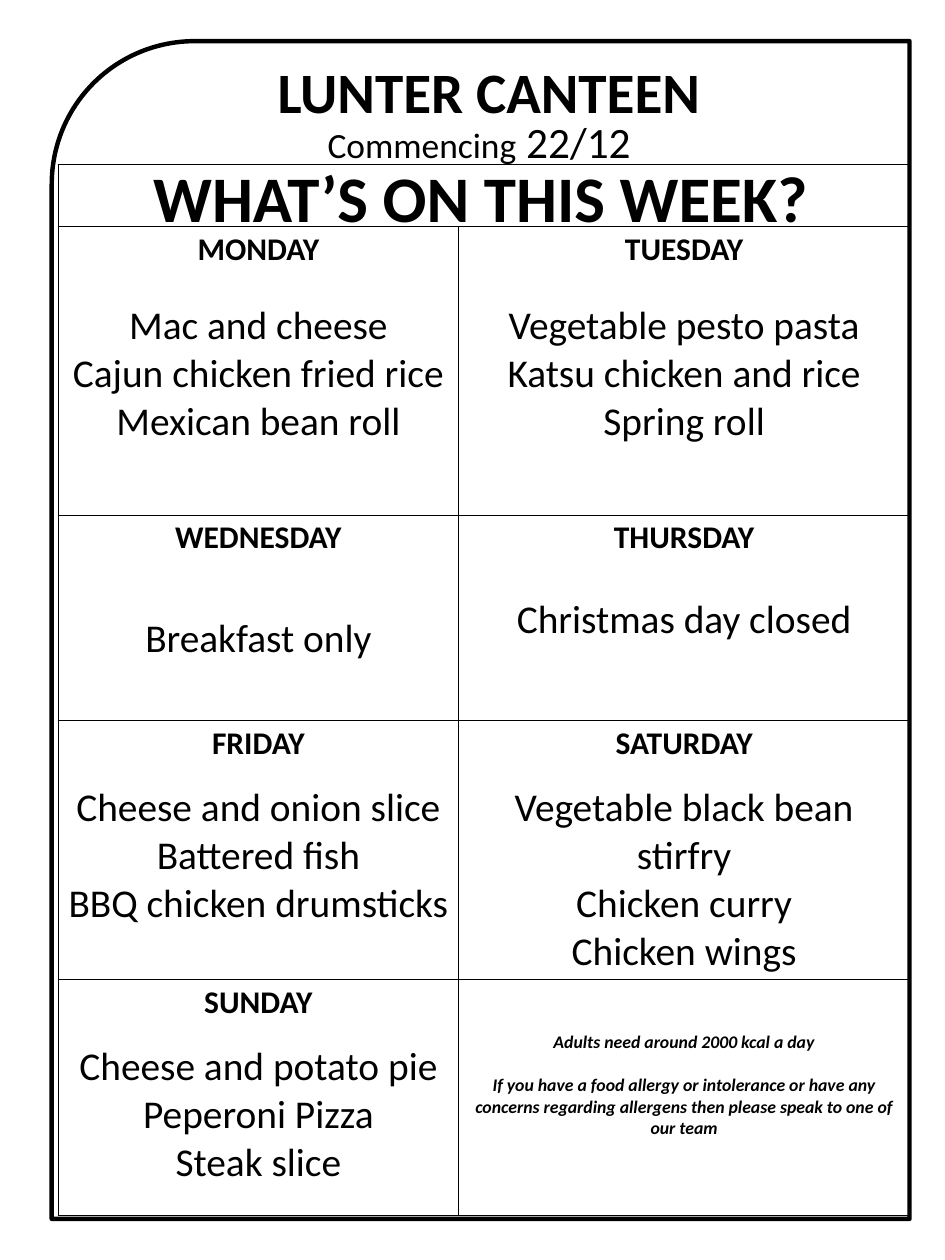
from lxml.etree import SubElement
from pptx import Presentation
from pptx.dml.color import RGBColor
from pptx.enum.shapes import MSO_SHAPE as Shape
from pptx.enum.text import PP_ALIGN as Align
from pptx.oxml.ns import qn
from pptx.util import Inches, Pt

FONT = "Calibri"
BLACK = "000000"
COLUMN_WIDTHS = [5.65, 6.36]
ROW_HEIGHTS = [0.88, 4.07, 2.9, 3.65, 3.32]

# Row, column, day, points between day and dishes, dishes
MENU = [
    (1, 0, "MONDAY", 34, ["Mac and cheese", "Cajun chicken fried rice", "Mexican bean roll"]),
    (1, 1, "TUESDAY", 34, ["Vegetable pesto pasta", "Katsu chicken and rice", "Spring roll"]),
    (2, 0, "WEDNESDAY", 59, ["Breakfast only"]),
    (2, 1, "THURSDAY", 39, ["Christmas day closed"]),
    (3, 0, "FRIDAY", 22, ["Cheese and onion slice", "Battered fish", "BBQ chicken drumsticks"]),
    (3, 1, "SATURDAY", 22, ["Vegetable black bean stirfry", "Chicken curry", "Chicken wings"]),
    (4, 0, "SUNDAY", 22, ["Cheese and potato pie", "Peperoni Pizza", "Steak slice"]),
]
ADVICE = [
    "Adults need around 2000 kcal a day",
    "If you have a food allergy or intolerance or have any concerns "
    "regarding allergens then please speak to one of our team",
]


def color(value):
    return RGBColor.from_string(value)


def style_font(font, size, bold=False, italic=False):
    font.name = FONT
    font.size = Pt(size)
    font.bold = bold
    font.italic = italic
    font.color.rgb = color(BLACK)


def add_line(text_frame, text, size, bold=False, italic=False, gap=0):
    """Fill the first paragraph if it is empty, else append one."""
    paragraph = text_frame.paragraphs[0]
    if paragraph.text:
        paragraph = text_frame.add_paragraph()
    paragraph.text = text
    paragraph.alignment = Align.CENTER
    paragraph.space_before = Pt(gap)
    style_font(paragraph.font, size, bold, italic)
    return paragraph


def add_heading(slide, left, top, width, height, text, size, bold=True):
    box = slide.shapes.add_textbox(Inches(left), Inches(top), Inches(width), Inches(height))
    box.text_frame.word_wrap = True
    return add_line(box.text_frame, text, size, bold)


def add_frame(slide):
    frame = slide.shapes.add_shape(
        Shape.ROUND_1_RECTANGLE, Inches(-1.53), Inches(2.84), Inches(16.62), Inches(12.1))
    frame.rotation = 270
    frame.shadow.inherit = False
    frame.fill.background()
    frame.line.color.rgb = color(BLACK)
    frame.line.width = Pt(4.5)


def outline_cell(cell):
    properties = cell._tc.get_or_add_tcPr()
    for side in ("a:lnL", "a:lnR", "a:lnT", "a:lnB"):
        line = SubElement(properties, qn(side), w=str(Pt(1)))
        fill = SubElement(line, qn("a:solidFill"))
        SubElement(fill, qn("a:srgbClr"), val=BLACK)
    cell.fill.background()


def add_menu_table(slide):
    table = slide.shapes.add_table(
        len(ROW_HEIGHTS), len(COLUMN_WIDTHS), Inches(0.82), Inches(2.32),
        Inches(sum(COLUMN_WIDTHS)), Inches(sum(ROW_HEIGHTS))).table
    table.first_row = table.horz_banding = False
    for column, width in zip(table.columns, COLUMN_WIDTHS):
        column.width = Inches(width)
    for row, height in zip(table.rows, ROW_HEIGHTS):
        row.height = Inches(height)
    for cell in table.iter_cells():
        outline_cell(cell)
    table.cell(0, 0).merge(table.cell(0, 1))
    return table


def fill_day(cell, day, gap, dishes):
    add_line(cell.text_frame, day, 32, bold=True)
    for index, dish in enumerate(dishes):
        add_line(cell.text_frame, dish, 40, gap=0 if index else gap)


def fill_advice(cell):
    cell.margin_top = Inches(0.73)
    for index, sentence in enumerate(ADVICE):
        add_line(cell.text_frame, sentence, 18, bold=True, italic=True, gap=22 * index)


def main():
    presentation = Presentation()
    presentation.slide_width = Inches(13.33)
    presentation.slide_height = Inches(17.78)
    slide = presentation.slides.add_slide(presentation.slide_layouts[6])

    add_frame(slide)
    table = add_menu_table(slide)
    for row, column, day, gap, dishes in MENU:
        fill_day(table.cell(row, column), day, gap, dishes)
    fill_advice(table.cell(4, 1))

    add_heading(slide, 1.04, 2.18, 11.48, 1.21, "WHAT’S ON THIS WEEK?", 66)
    add_heading(slide, 3.37, 0.75, 7.05, 1.08, "LUNTER CANTEEN", 58)
    week = add_heading(slide, 2.51, 1.57, 8.5, 0.84, "Commencing", 36, bold=False)
    date = week.add_run()
    date.text = " 22/12"
    style_font(date.font, 44)

    presentation.save("out.pptx")


if __name__ == "__main__":
    main()
